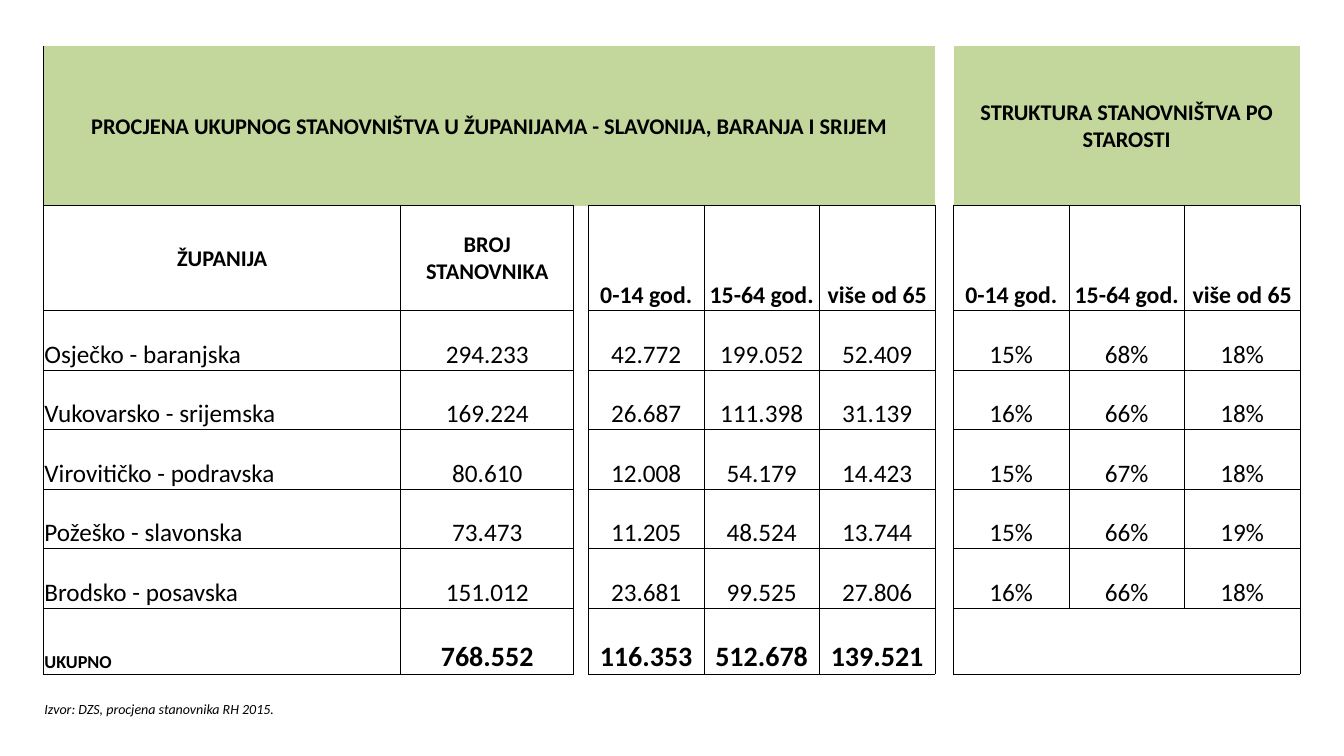
from lxml.etree import SubElement
from pptx import Presentation
from pptx.dml.color import RGBColor
from pptx.enum.text import MSO_ANCHOR as Anchor, PP_ALIGN as Align
from pptx.oxml.ns import qn
from pptx.util import Cm, Pt

BLACK = "000000"
GREEN = "C3D69B"
AGE_GROUPS = ["0-14 god.", "15-64 god.", "više od 65"]
COUNTIES = [
    ["Osječko - baranjska", "294.233", "42.772", "199.052", "52.409", "15%", "68%", "18%"],
    ["Vukovarsko - srijemska", "169.224", "26.687", "111.398", "31.139", "16%", "66%", "18%"],
    ["Virovitičko - podravska", "80.610", "12.008", "54.179", "14.423", "15%", "67%", "18%"],
    ["Požeško - slavonska", "73.473", "11.205", "48.524", "13.744", "15%", "66%", "19%"],
    ["Brodsko - posavska", "151.012", "23.681", "99.525", "27.806", "16%", "66%", "18%"],
]
TOTALS = ["768.552", "116.353", "512.678", "139.521"]

AGE_WIDTHS = [2.91] * 3
WIDTHS = [9, 4.36, 0.37, *AGE_WIDTHS, 0.47, *AGE_WIDTHS]
HEIGHTS = [4.01, 2.64, *[1.5] * len(COUNTIES), 1.66, 1.12]
DATA_COLUMNS = [0, 1, 3, 4, 5, 7, 8, 9]
SHARE_START = 7
TOTAL_ROW = 2 + len(COUNTIES)
SOURCE_ROW = TOTAL_ROW + 1


def color(value):
    return RGBColor.from_string(value)


def write(cell, text, size=18, bold=False, italic=False, align=Align.CENTER, anchor=Anchor.BOTTOM):
    cell.vertical_anchor = anchor
    paragraph = cell.text_frame.paragraphs[0]
    paragraph.alignment = align
    run = paragraph.add_run()
    run.text = text
    run.font.name = "Calibri"
    run.font.size = Pt(size)
    run.font.bold = bold
    run.font.italic = italic
    run.font.color.rgb = color(BLACK)


def style_cell(cell, sides, fill=None):
    cell.margin_left = cell.margin_right = cell.margin_top = Cm(0.02)
    cell.margin_bottom = 0
    properties = cell._tc.get_or_add_tcPr()
    for side in "LRTB":
        border = SubElement(properties, qn(f"a:ln{side}"), w=str(Pt(0.5)))
        if side in sides:
            paint = SubElement(border, qn("a:solidFill"))
            SubElement(paint, qn("a:srgbClr"), val=BLACK)
        else:
            SubElement(border, qn("a:noFill"))
    if fill:
        cell.fill.solid()
        cell.fill.fore_color.rgb = color(fill)
    else:
        cell.fill.background()


def style_grid(table):
    for row in range(len(HEIGHTS)):
        for column in range(len(WIDTHS)):
            is_gap = column not in DATA_COLUMNS
            sides, fill = "LRTB", None
            if row == 0:
                sides = "L" if column == 0 else ""
                fill = None if column == SHARE_START - 1 else GREEN
            elif row == SOURCE_ROW:
                sides = "" if is_gap else "T"
            elif is_gap:
                sides = "LR"
            elif row == TOTAL_ROW and column > SHARE_START:
                sides = "TBR" if column == len(WIDTHS) - 1 else "TB"
            style_cell(table.cell(row, column), sides, fill)


def fill_headers(table):
    heading = dict(size=16, bold=True, anchor=Anchor.MIDDLE)
    write(table.cell(0, 0), "PROCJENA UKUPNOG STANOVNIŠTVA U ŽUPANIJAMA - SLAVONIJA, BARANJA I SRIJEM", **heading)
    write(table.cell(0, SHARE_START), "STRUKTURA STANOVNIŠTVA PO STAROSTI", **heading)
    write(table.cell(1, 0), "ŽUPANIJA", **heading)
    write(table.cell(1, 1), "BROJ STANOVNIKA", **heading)
    for column, age_group in zip(DATA_COLUMNS[2:], AGE_GROUPS * 2):
        write(table.cell(1, column), age_group, size=17, bold=True)


def fill_counties(table):
    for row, county in enumerate(COUNTIES, 2):
        for column, value in zip(DATA_COLUMNS, county):
            write(table.cell(row, column), value, align=Align.CENTER if column else Align.LEFT)


def fill_footer(table):
    write(table.cell(TOTAL_ROW, 0), "UKUPNO", size=13, bold=True, align=Align.LEFT)
    for column, total in zip(DATA_COLUMNS[1:], TOTALS):
        write(table.cell(TOTAL_ROW, column), total, size=20, bold=True)
    write(table.cell(SOURCE_ROW, 0), "Izvor: DZS, procjena stanovnika RH 2015.",
          size=10, italic=True, align=Align.LEFT)


def add_population_table(slide, left, top):
    table = slide.shapes.add_table(
        len(HEIGHTS), len(WIDTHS), Cm(left), Cm(top), Cm(sum(WIDTHS)), Cm(sum(HEIGHTS))
    ).table
    table.first_row = table.horz_banding = False
    for column, width in zip(table.columns, WIDTHS):
        column.width = Cm(width)
    for row, height in zip(table.rows, HEIGHTS):
        row.height = Cm(height)
    style_grid(table)
    for row, first, last in [(0, 0, 5), (0, SHARE_START, 9), (TOTAL_ROW, SHARE_START, 9)]:
        table.cell(row, first).merge(table.cell(row, last))
    fill_headers(table)
    fill_counties(table)
    fill_footer(table)


def main():
    deck = Presentation()
    deck.slide_width, deck.slide_height = Cm(33.87), Cm(19.05)
    slide = deck.slides.add_slide(deck.slide_layouts[6])
    add_population_table(slide, left=1.1, top=1.17)
    deck.save("out.pptx")


if __name__ == "__main__":
    main()
